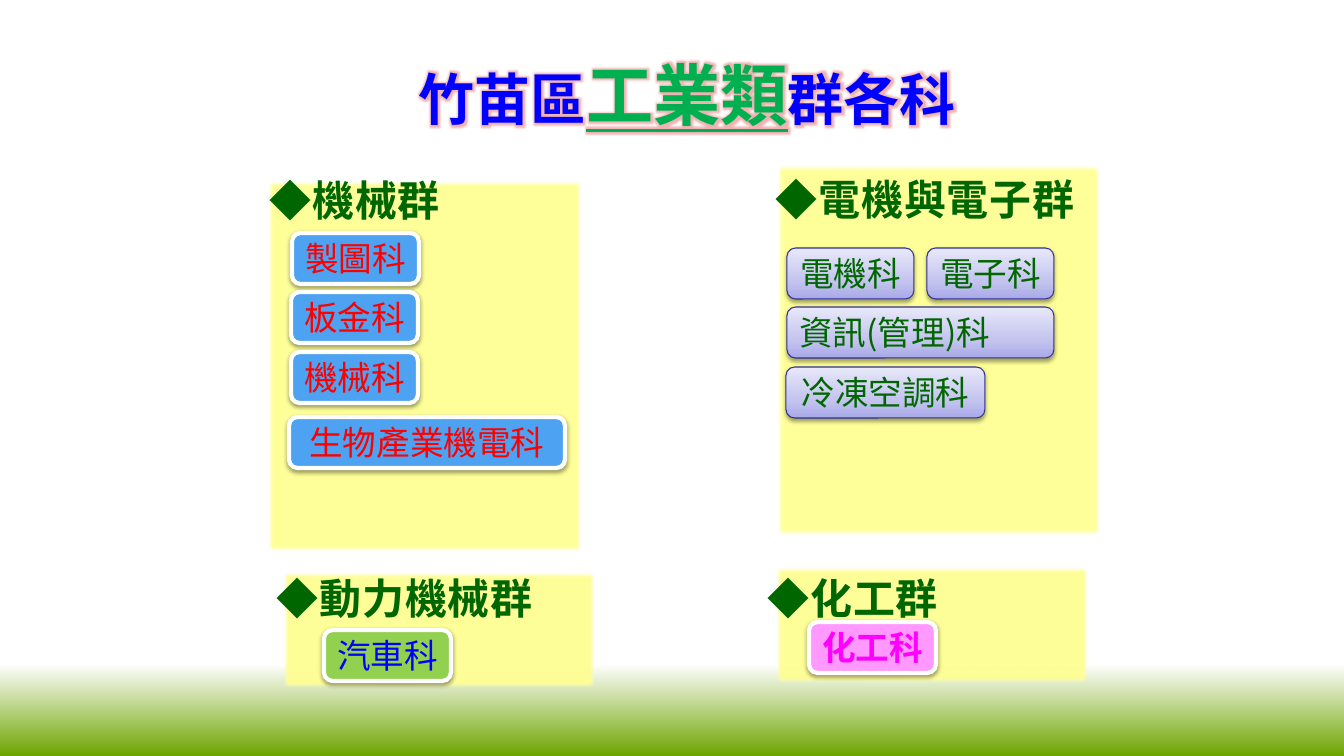
from pptx import Presentation
from pptx.dml.color import RGBColor
from pptx.enum.shapes import MSO_SHAPE
from pptx.enum.text import MSO_ANCHOR, PP_ALIGN
from pptx.oxml import parse_xml
from pptx.oxml.ns import nsdecls, qn
from pptx.util import Emu, Pt

RECT, ROUNDED = MSO_SHAPE.RECTANGLE, MSO_SHAPE.ROUNDED_RECTANGLE
MIDDLE = MSO_ANCHOR.MIDDLE
LEFT, CENTER = PP_ALIGN.LEFT, PP_ALIGN.CENTER
SCALE = 914400 / 100.8
FONT = "Noto Sans CJK SC"
COLORS = {
    "white": "FFFFFF", "grass": "6DA400", "panel": "FFFF99", "heading": "006600",
    "blue": "0000FF", "green": "00B050", "red": "FF0000", "sky": "4DA3F1",
    "lime": "92D050", "pink": "FF99FF", "magenta": "FF00FF", "indigo": "2F2F98",
    "lavender": "A9A9E9", "lilac": "C4C4EF", "mist": "E8E8FA",
    "shadow": "000000", "glow": "E06666",
}
LAVENDER_STOPS = [(0, "lavender"), (35, "lilac"), (100, "mist")]
PILL_STYLES = {
    "machinery": {"fill": "sky", "text": "red"},
    "power": {"fill": "lime", "text": "blue"},
    "chemical": {"fill": "pink", "text": "magenta", "bold": True},
    "electrical": {"stops": LAVENDER_STOPS, "text": "heading",
                   "line": "indigo", "line_pt": 0.75},
}
PILL_WIDTH, PILL_HEIGHT, HEADING_HEIGHT = 127, 51, 64


def px(*lengths):
    return [Emu(round(length * SCALE)) for length in lengths]


def rgb(name):
    return RGBColor.from_string(COLORS[name])


def drawing(xml):
    head, tail = xml.split(" ", 1)
    return parse_xml(f"{head} {nsdecls('a')} {tail}")


def tint(name, alpha):
    return f'<a:srgbClr val="{COLORS[name]}"><a:alpha val="{alpha * 1000}"/></a:srgbClr>'


def add_block(slide, kind, box):
    block = slide.shapes.add_shape(kind, *px(*box))
    block.shadow.inherit = False
    block.line.fill.background()
    return block


def add_effect(block, xml):
    block._element.spPr.find(qn("a:effectLst")).append(drawing(xml))


def paint_gradient(block, stops, angle):
    marks = "".join(
        f'<a:gs pos="{pos * 1000}"><a:srgbClr val="{COLORS[name]}"/></a:gs>'
        for pos, name in stops)
    block._element.spPr.find(qn("a:prstGeom")).addnext(drawing(
        f'<a:gradFill rotWithShape="1"><a:gsLst>{marks}</a:gsLst>'
        f'<a:lin ang="{angle * 60000}" scaled="0"/></a:gradFill>'))


def style_run(run, size, color, bold=False):
    run.font.size = Pt(size)
    run.font.bold = bold
    run.font.color.rgb = rgb(color)
    run.font.name = FONT
    run.font._element.find(qn("a:latin")).addnext(
        drawing(f'<a:ea typeface="{FONT}"/>'))


def add_ground(slide, box):
    ground = add_block(slide, RECT, box)
    paint_gradient(ground, [(0, "white"), (100, "grass")], 90)


def add_title(slide, box):
    frame = slide.shapes.add_textbox(*px(*box)).text_frame
    frame.word_wrap = True
    line = frame.paragraphs[0]
    line.alignment = CENTER
    for words, size, color, underline in [("竹苗區", 40, "blue", False),
                                          ("工業類", 48, "green", True),
                                          ("群各科", 40, "blue", False)]:
        run = line.add_run()
        run.text = words
        style_run(run, size, color, True)
        run.font.underline = underline
        run.font._element.find(qn("a:solidFill")).addnext(drawing(
            f'<a:effectLst ><a:glow rad="63500">{tint("glow", 50)}</a:glow></a:effectLst>'))


def add_heading(slide, box, words):
    frame = slide.shapes.add_textbox(*px(*box)).text_frame
    frame.word_wrap = True
    frame.margin_left, frame.margin_top, frame.margin_right, frame.margin_bottom = px(4, 4, 4, 4)
    frame.text = words
    run = frame.paragraphs[0].runs[0]
    style_run(run, 30, "heading", True)
    run.font._element.set("spc", "50")


def add_pill(slide, box, words, style, align):
    pill = add_block(slide, ROUNDED, box)
    if "stops" in style:
        paint_gradient(pill, style["stops"], 270)
    else:
        pill.fill.solid()
        pill.fill.fore_color.rgb = rgb(style["fill"])
    pill.line.color.rgb = rgb(style.get("line", "white"))
    pill.line.width = Pt(style.get("line_pt", 3))
    add_effect(pill, '<a:outerShdw blurRad="40000" dist="20000" dir="5400000" '
                     f'rotWithShape="0">{tint("shadow", 38)}</a:outerShdw>')
    frame = pill.text_frame
    frame.word_wrap = True
    frame.vertical_anchor = MIDDLE
    frame.text = words
    frame.paragraphs[0].alignment = align
    style_run(frame.paragraphs[0].runs[0], 24, style["text"], style.get("bold", False))


def add_group(slide, box, heading, heading_box, style, departments):
    left, top = box[:2]
    panel = add_block(slide, RECT, box)
    panel.fill.solid()
    panel.fill.fore_color.rgb = rgb("panel")
    add_effect(panel, '<a:softEdge rad="31750"/>')
    dx, dy, width = heading_box
    add_heading(slide, (left + dx, top + dy, width, HEADING_HEIGHT), heading)
    for words, dx, dy, width, align in departments:
        add_pill(slide, (left + dx, top + dy, width, PILL_HEIGHT),
                 words, PILL_STYLES[style], align)


def main():
    deck = Presentation()
    deck.slide_width, deck.slide_height = px(1344, 756)
    slide = deck.slides.add_slide(deck.slide_layouts[6])
    add_ground(slide, (0, 664, 1344, 92))
    add_group(slide, (267, 180, 316, 373), "◆機械群", (-1, -10, 287), "machinery", [
        ("製圖科", 25, 53, PILL_WIDTH, CENTER),
        ("板金科", 24, 112, PILL_WIDTH, CENTER),
        ("機械科", 24, 172, PILL_WIDTH, CENTER),
        ("生物產業機電科", 22, 237, 276, CENTER),
    ])
    add_group(slide, (776, 164, 326, 373), "◆電機與電子群", (-4, 5, 335), "electrical", [
        ("電機科", 11, 84, PILL_WIDTH, CENTER),
        ("電子科", 151, 84, PILL_WIDTH, CENTER),
        ("資訊(管理)科", 11, 143, 267, LEFT),
        ("冷凍空調科", 10, 203, 199, CENTER),
    ])
    add_group(slide, (281, 571, 316, 119), "◆動力機械群", (-8, -3, 351), "power",
              [("汽車科", 43, 59, PILL_WIDTH, CENTER)])
    add_group(slide, (774, 566, 316, 119), "◆化工群", (-10, 2, 339), "chemical",
              [("化工科", 35, 56, PILL_WIDTH, CENTER)])
    add_title(slide, (266, 48, 842, 92))
    deck.save("out.pptx")


if __name__ == "__main__":
    main()
